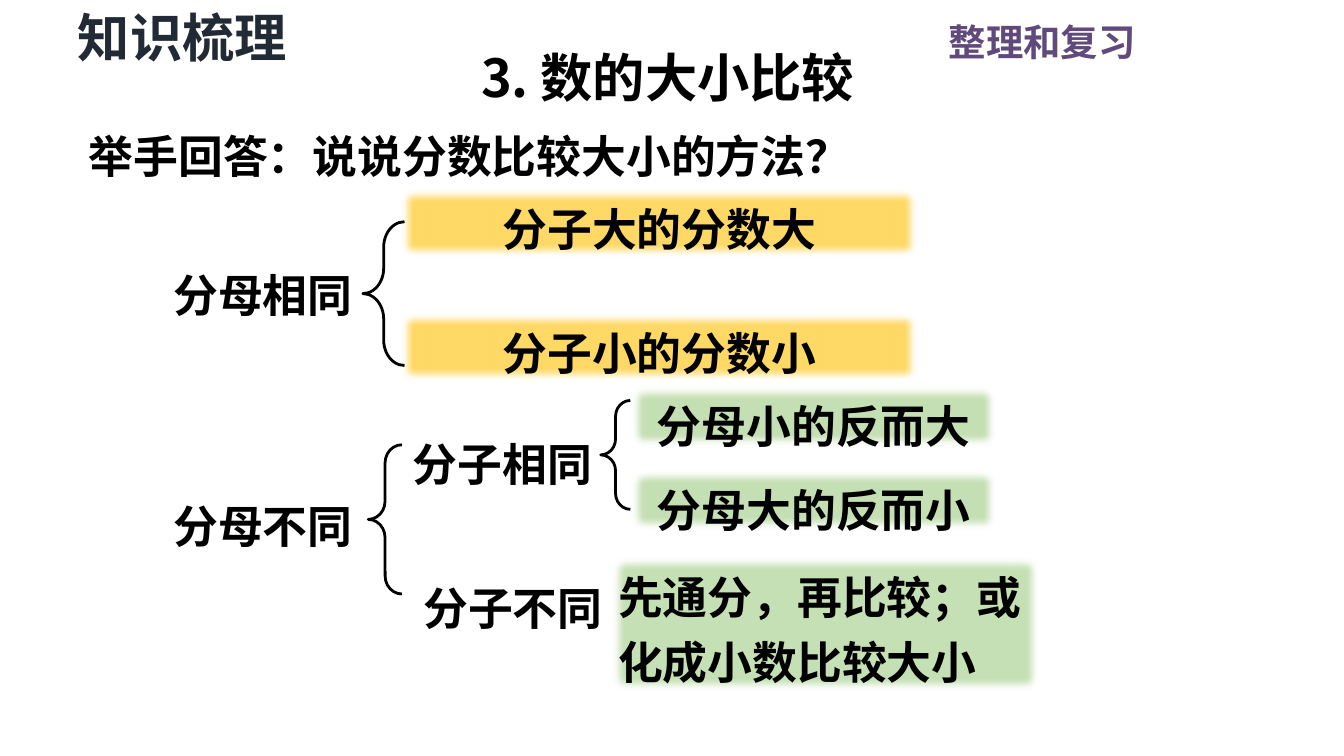
"""Build the review slide on comparing the size of fractions."""
import pptx
import pptx.util
import pptx.dml.color
import pptx.enum.shapes
import pptx.enum.text
import pptx.oxml.ns
import lxml.etree

FONT = "Noto Sans CJK SC"
COLORS = {
    "ink": "000000",
    "slate": "222A35",
    "purple": "604A7B",
    "yellow": "FFD966",
    "green": "C5E0B4",
}
SHAPES = pptx.enum.shapes.MSO_SHAPE
ALIGN = pptx.enum.text.PP_ALIGN

deck = pptx.Presentation()
deck.slide_width = pptx.util.Inches(10)
deck.slide_height = deck.slide_width * 9 // 16
COLUMN = deck.slide_width / 100
ROW = deck.slide_height / 56.25
page = deck.slides.add_slide(deck.slide_layouts[5])


def grid(left, top, width, height):
    return [int(left * COLUMN), int(top * ROW), int(width * COLUMN), int(height * ROW)]


def write(text, cells, box=None, fill=None, size=24, color="ink", align=ALIGN.LEFT,
          spacing=1.2, inset=(0.07, 0.04)):
    if fill:
        box = page.shapes.add_shape(SHAPES.RECTANGLE, *grid(*cells))
        box.shadow.inherit = False
        box.fill.solid()
        box.fill.fore_color.rgb = pptx.dml.color.RGBColor.from_string(COLORS[fill])
        box.line.fill.background()
        effects = box._element.spPr.find(pptx.oxml.ns.qn("a:effectLst"))
        lxml.etree.SubElement(effects, pptx.oxml.ns.qn("a:softEdge"), rad="63500")
    elif box is None:
        box = page.shapes.add_textbox(*grid(*cells))
    box.left, box.top, box.width, box.height = grid(*cells)
    frame = box.text_frame
    frame.word_wrap = True
    frame.auto_size = pptx.enum.text.MSO_AUTO_SIZE.NONE
    frame.vertical_anchor = pptx.enum.text.MSO_ANCHOR.TOP
    frame.margin_left = frame.margin_right = pptx.util.Inches(inset[0])
    frame.margin_top = frame.margin_bottom = pptx.util.Inches(inset[1])
    para = frame.paragraphs[0]
    para.alignment = align
    para.line_spacing = spacing
    span = para.add_run()
    span.text = text
    span.font.name = FONT
    span.font.size = pptx.util.Pt(size)
    span.font.bold = True
    span.font.color.rgb = pptx.dml.color.RGBColor.from_string(COLORS[color])
    east_asian = lxml.etree.SubElement(span.font._element, pptx.oxml.ns.qn("a:ea"))
    east_asian.set("typeface", FONT)


write("3. 数的大小比较", (35.1, 3, 42.9, 5.5), box=page.shapes.title, size=28, spacing=1.0)
write("整理和复习", (57.9, 0.9, 27.6, 4.4), size=20, color="purple",
      align=ALIGN.RIGHT, spacing=1.0, inset=(0.1, 0.05))
write("知识梳理", (5.1, 0, 20.2, 5.5), size=28, color="slate", spacing=1.0)
write("举手回答：说说分数比较大小的方法？", (5.9, 8.4, 57, 5.6))

for text, left, top in [
    ("分母相同", 12.2, 18.7),
    ("分母不同", 12.2, 35.9),
    ("分子相同", 30, 31.3),
    ("分子不同", 30.8, 42),
]:
    write(text, (left, top, 15.1, 5.6))

for text, top in [("分子大的分数大", 13.8), ("分子小的分数小", 23)]:
    write(text, (29.6, top, 38.9, 5.6), fill="yellow", align=ALIGN.CENTER)

for text, top in [("分母小的反而大", 28.5), ("分母大的反而小", 34.7)]:
    write(text, (46.7, top, 27.7, 5), fill="green", align=ALIGN.CENTER)

write("先通分，再比较；或化成小数比较大小", (45.3, 41.2, 32.3, 10.5), fill="green")

for cells, curve in [
    ((27, 16.5, 3.1, 10.7), 0.61),
    ((27.4, 33.1, 2.5, 11.1), 0.54),
    ((44.7, 29.8, 2.2, 8.1), 0.54),
]:
    brace = page.shapes.add_shape(SHAPES.LEFT_BRACE, *grid(*cells))
    brace.shadow.inherit = False
    brace.adjustments[0] = curve
    brace.adjustments[1] = 0.5
    brace.fill.background()
    brace.line.color.rgb = pptx.dml.color.RGBColor.from_string(COLORS["ink"])
    brace.line.width = pptx.util.Pt(1.5)

deck.save("out.pptx")
